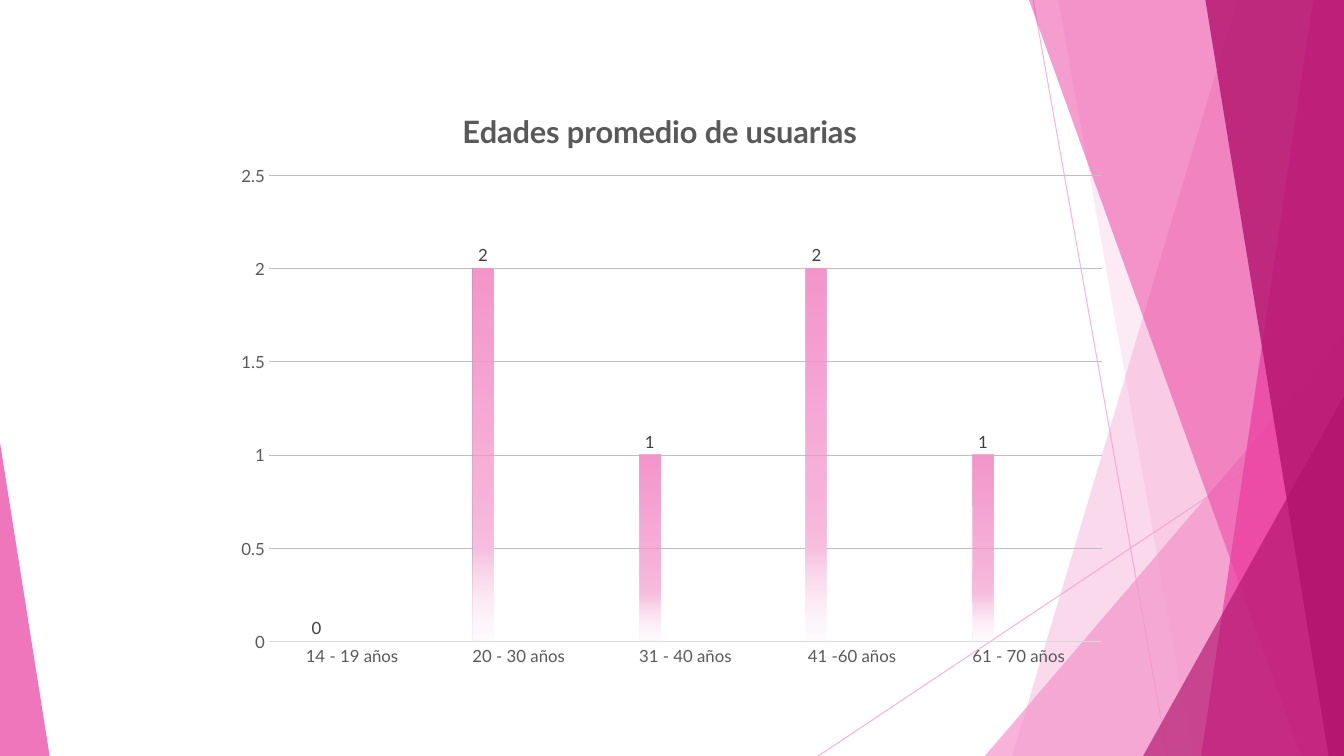
from dataclasses import dataclass
from typing import Any

from lxml import etree
from pptx import Presentation
from pptx import util as u
from pptx.chart import data
from pptx.dml import color
from pptx.enum import chart as ce, shapes
from pptx.oxml import ns

W, H = 960, 540
FONT = "Lato"
C = {
    "pink": "F496CB", "magenta": "EB3D9F", "berry": "B2136D",
    "pale": "F8C0E0", "mist": "FDEAF5",
    "rose": "BC356F", "rose_pale": "DC81A8", "rose_mist": "F3D5E2",
    "coral": "E65331", "coral_pale": "F09883", "coral_mist": "FADDD6",
    "text": "595959", "label": "404040", "axis": "D9D9D9", "grid": "BFBFBF",
}


@dataclass
class Ray:
    x1: float
    y1: float
    x2: float
    y2: float
    alpha: int = 70


@dataclass
class Panel:
    top: float
    bottom: float
    fill: str
    alpha: int


@dataclass
class Wedge:
    x: float
    y: float
    w: float
    apex: float
    fill: str
    alpha: int


@dataclass
class Series:
    name: str
    values: tuple
    tones: tuple[str, str, str]


DECOR = [
    Ray(738, 0, 834, H),
    Ray(W, 290, 584.5, H),
    Panel(884, 723, "pink", 36),
    Panel(756, 852, "pink", 20),
    Wedge(703.5, 240, 256.5, 1, "pink", 72),
    Panel(735, 929.5, "magenta", 50),
    Panel(938, 858, "magenta", 70),
    Panel(861, 949, "berry", 80),
    Wedge(816.5, 283, 143.5, 1, "berry", 66),
    Wedge(0, 316, 35.5, 0, "magenta", 70),
]
AGES = ["14 - 19 años", "20 - 30 años", "31 - 40 años", "41 -60 años", "61 - 70 años"]
SERIES = [
    Series("Series 1", (0, 2, 1, 2, 1), ("pink", "pale", "mist")),
    Series("Series 2", (None,) * 5, ("rose", "rose_pale", "rose_mist")),
    Series("Series 3", (None,) * 5, ("coral", "coral_pale", "coral_mist")),
]


def rgb(name: str) -> color.RGBColor:
    return color.RGBColor.from_string(C[name])


def apply(obj: Any, values: dict[str, Any]) -> None:
    for key, value in values.items():
        setattr(obj, key, value)


def set_font(font: Any, size: float, tone: str, bold: bool = False) -> None:
    apply(font, {"name": FONT, "size": u.Pt(size), "bold": bold})
    font.color.rgb = rgb(tone)


def set_line(line: Any, tone: str) -> None:
    line.color.rgb = rgb(tone)
    line.width = u.Pt(0.75)


def sub(parent: Any, tag: str, **attrs: Any) -> Any:
    return etree.SubElement(parent, ns.qn(tag), {k: str(v) for k, v in attrs.items()})


def set_alpha(sp: Any, percent: int) -> None:
    clr = next(sp.element.spPr.iter(ns.qn("a:srgbClr")))
    sub(clr, "a:alpha", val=percent * 1000)


def draw_ray(slide: Any, ray: Ray) -> None:
    ends = [u.Pt(v) for v in (ray.x1, ray.y1, ray.x2, ray.y2)]
    line = slide.shapes.add_connector(shapes.MSO_CONNECTOR.STRAIGHT, *ends)
    set_line(line.line, "pink")
    set_alpha(line, ray.alpha)
    sub(line.element.spPr, "a:effectLst")


def paint(sp: Any, item: Panel | Wedge) -> None:
    sp.shadow.inherit = False
    sp.fill.solid()
    sp.fill.fore_color.rgb = rgb(item.fill)
    sp.line.fill.background()
    set_alpha(sp, item.alpha)


def draw_panel(slide: Any, panel: Panel) -> None:
    corners = [(panel.top, 0), (W, 0), (W, H), (panel.bottom, H)]
    start, *rest = [(u.Pt(x), u.Pt(y)) for x, y in corners]
    outline = slide.shapes.build_freeform(*start)
    outline.add_line_segments(rest, close=True)
    paint(outline.convert_to_shape(), panel)


def draw_wedge(slide: Any, wedge: Wedge) -> None:
    box = [u.Pt(v) for v in (wedge.x, wedge.y, wedge.w, H - wedge.y)]
    sp = slide.shapes.add_shape(shapes.MSO_SHAPE.ISOSCELES_TRIANGLE, *box)
    sp.adjustments[0] = wedge.apex
    paint(sp, wedge)


def fade(series: Any, tones: tuple[str, str, str]) -> None:
    series.format.fill.solid()
    main, pale, mist = tones
    grad = etree.Element(ns.qn("a:gradFill"), rotWithShape="1")
    stops = sub(grad, "a:gsLst")
    for pos, tone, alpha in [(0, main, 100), (51, main, 75), (75, pale, 100), (100, mist, 15)]:
        clr = sub(sub(stops, "a:gs", pos=pos * 1000), "a:srgbClr", val=C[tone])
        sub(clr, "a:alpha", val=alpha * 1000)
    sub(grad, "a:lin", ang=5400000, scaled=0)
    solid = next(series.format.fill._xPr.iter(ns.qn("a:solidFill")))
    solid.getparent().replace(solid, grad)


def place(parent: Any, index: int, values: dict[str, Any]) -> None:
    for old in parent.findall(ns.qn("c:layout")):
        parent.remove(old)
    layout = etree.Element(ns.qn("c:layout"))
    manual = sub(layout, "c:manualLayout")
    for tag, value in values.items():
        sub(manual, f"c:{tag}", val=value)
    parent.insert(index, layout)


def draw_chart(slide: Any) -> None:
    cd = data.CategoryChartData()
    cd.categories = AGES
    for s in SERIES:
        cd.add_series(s.name, s.values)
    box = [u.Pt(v) for v in (160, 57, 640, 427)]
    chart = slide.shapes.add_chart(ce.XL_CHART_TYPE.COLUMN_CLUSTERED, *box, cd).chart
    apply(chart, {"has_legend": False, "has_title": True})
    set_font(chart.font, 10, "text")

    p = chart.chart_title.text_frame.paragraphs[0]
    r = p.add_run()
    r.text = "Edades promedio de usuarias"
    set_font(r.font, 22, "text", bold=True)

    plot = chart.plots[0]
    apply(plot, {"gap_width": 355, "overlap": -70, "vary_by_categories": False})
    for drawn, s in zip(plot.series, SERIES):
        fade(drawn, s.tones)
        labels = drawn.data_labels
        apply(labels, {"show_value": True, "position": ce.XL_LABEL_POSITION.OUTSIDE_END})
        set_font(labels.font, 12, "label")

    for axis in (chart.category_axis, chart.value_axis):
        apply(axis, {"major_tick_mark": ce.XL_TICK_MARK.NONE,
                     "minor_tick_mark": ce.XL_TICK_MARK.NONE})
        set_font(axis.tick_labels.font, 12, "text")
    set_line(chart.category_axis.format.line, "axis")
    values = chart.value_axis
    apply(values, {"minimum_scale": 0, "maximum_scale": 2.5, "major_unit": 0.5})
    values.format.line.fill.background()
    set_line(values.major_gridlines.format.line, "grid")

    edge = {"xMode": "edge", "yMode": "edge"}
    root = chart.element
    place(root.find(".//" + ns.qn("c:title")), 1, edge | {"x": 0.26, "y": 0.04})
    place(root.find(".//" + ns.qn("c:plotArea")), 0,
          {"layoutTarget": "inner"} | edge | {"x": 0.05, "y": 0.16, "w": 0.93, "h": 0.78})


def main() -> None:
    prs = Presentation()
    apply(prs, {"slide_width": u.Pt(W), "slide_height": u.Pt(H)})
    slide = prs.slides.add_slide(prs.slide_layouts[6])
    draw = {Ray: draw_ray, Panel: draw_panel, Wedge: draw_wedge}
    for item in DECOR:
        draw[type(item)](slide, item)
    draw_chart(slide)
    prs.save("out.pptx")


if __name__ == "__main__":
    main()
